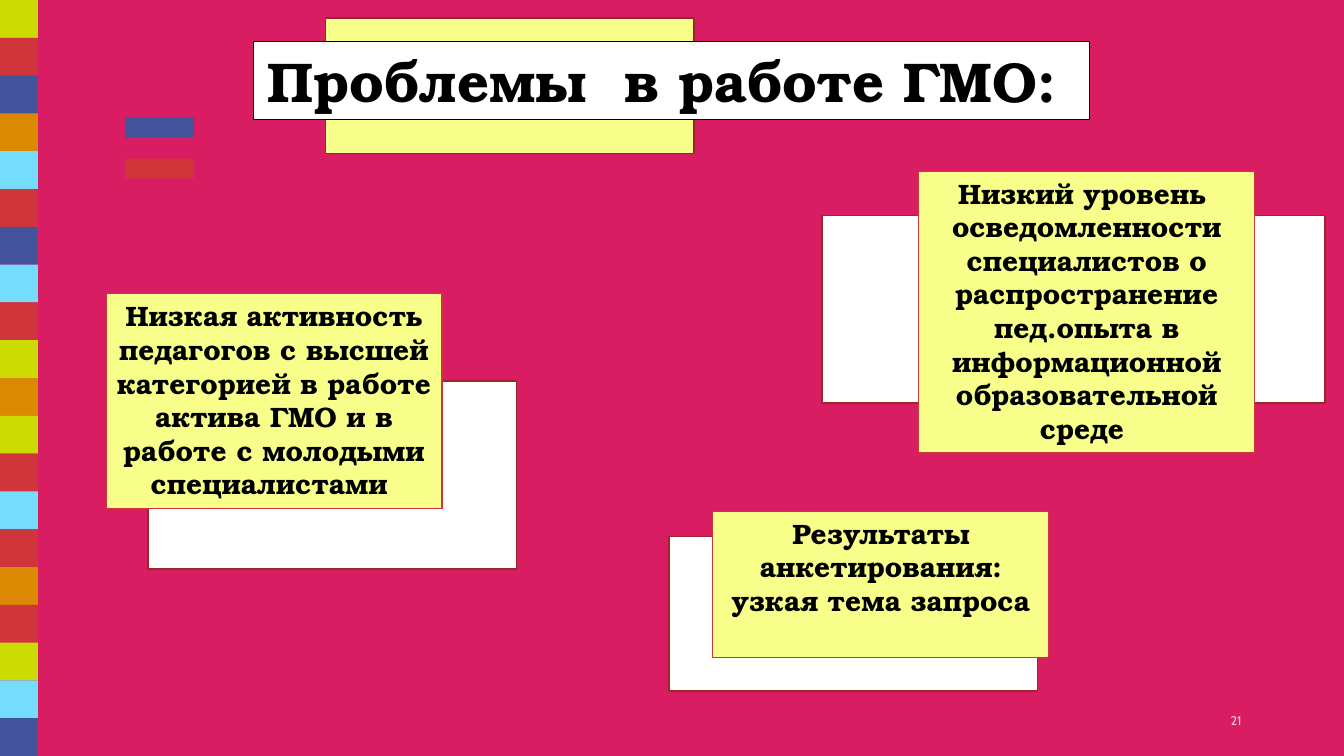
from pptx import Presentation
from pptx.dml.color import RGBColor
from pptx.enum.shapes import MSO_SHAPE
from pptx.enum.text import MSO_ANCHOR, PP_ALIGN
from pptx.oxml import parse_xml
from pptx.oxml.ns import nsdecls
from pptx.util import Pt

RECTANGLE = MSO_SHAPE.RECTANGLE
TOP, MIDDLE = MSO_ANCHOR.TOP, MSO_ANCHOR.MIDDLE
CENTER, RIGHT = PP_ALIGN.CENTER, PP_ALIGN.RIGHT

PX = 9525
WIDTH, HEIGHT = 1280, 720
HEADING_FONT, NUMBER_FONT = "TeX Gyre Bonum", "Cabin"
CRIMSON, LEMON, WHITE, BLACK = "D91D62", "F7FF8A", "FFFFFF", "000000"
LIME, RED, BLUE, ORANGE, SKY = "CBDA00", "D1353C", "42529B", "DB8802", "76DCFD"
MAROON, PALE_PINK, OLIVE, DARK_OLIVE = "9B272C", "F9D0DF", "98A300", "656D00"

STRIPE = [LIME, RED, BLUE, ORANGE, SKY, RED, BLUE, SKY, RED, LIME,
          ORANGE, LIME, RED, SKY, RED, ORANGE, RED, LIME, SKY, BLUE]
PROBLEMS = [
    ((101, 280, 320, 204), (40, 83, 351, 179), OLIVE,
     ["Низкая активность педагогов с высшей категорией в работе "
      "актива ГМО и в работе с молодыми специалистами "]),
    ((875, 163, 320, 268), (-92, 42, 479, 179), OLIVE,
     ["Низкий уровень  осведомленности специалистов о распространение "
      "пед.опыта в информационной образовательной среде "]),
    ((679, 487, 320, 139), (-42, 24, 351, 147), DARK_OLIVE,
     ["Результаты анкетирования:", "узкая тема запроса"]),
]


def rgb(hex_color):
    """Turn a hex string into a colour."""
    return RGBColor.from_string(hex_color)


def emu(box):
    """Turn a box in px into EMU lengths."""
    return [length * PX for length in box]


def panel(slide, box, fill, line=None, line_width=1):
    """Draw a flat rectangle with an optional border."""
    rectangle = slide.shapes.add_shape(RECTANGLE, *emu(box))
    rectangle.shadow.inherit = False
    rectangle.fill.solid()
    rectangle.fill.fore_color.rgb = rgb(fill)
    if line:
        rectangle.line.color.rgb = rgb(line)
        rectangle.line.width = Pt(line_width)
    else:
        rectangle.line.fill.background()
    return rectangle


def write(frame, lines, size, font, color, align, anchor=TOP, bold=False):
    """Fill a text frame with evenly styled paragraphs."""
    frame.text = "\n".join(lines)
    frame.vertical_anchor = anchor
    for paragraph in frame.paragraphs:
        paragraph.alignment = align
        paragraph.font.size = Pt(size)
        paragraph.font.name = font
        paragraph.font.bold = bold
        paragraph.font.color.rgb = rgb(color)


def outline(frame, color):
    """Give the letters a thin coloured outline."""
    for paragraph in frame.paragraphs:
        for run in paragraph.runs:
            properties = run.font._element
            properties.insert(0, parse_xml(
                f'<a:ln {nsdecls("a")} w="{Pt(0.75)}"><a:solidFill>'
                f'<a:srgbClr val="{color}"/></a:solidFill></a:ln>'))


def stripe(slide, box):
    """Stack equal coloured tiles down the box."""
    left, top, width, height = box
    tile = height // len(STRIPE)
    for row, color in enumerate(STRIPE):
        panel(slide, (left, top + row * tile, width, tile), color)


def equals_sign(slide, box):
    """Place a blue bar at the top of the box and a red one at its bottom."""
    left, top, width, height = box
    bar = 19
    panel(slide, (left, top, width, bar), BLUE)
    panel(slide, (left, top + height - bar, width, bar), RED)


def title(slide, box):
    """Place the heading banner over its yellow backing."""
    left, top, width, height = box
    panel(slide, (left + 69, top - 23, 351, 129), LEMON, MAROON)
    frame = panel(slide, box, WHITE, BLACK, 0.75).text_frame
    frame.word_wrap = False
    write(frame, ["Проблемы  в работе ГМО: "], 40, HEADING_FONT, BLACK, CENTER, bold=True)
    outline(frame, OLIVE)


def problem(slide, box, backing, edge, lines):
    """Place a yellow note over a white backing offset from it."""
    left, top, width, height = box
    shift_x, shift_y, backing_width, backing_height = backing
    panel(slide, (left + shift_x, top + shift_y, backing_width, backing_height), WHITE, MAROON)
    frame = panel(slide, box, LEMON, RED, 0.75).text_frame
    frame.word_wrap = True
    write(frame, lines, 20, HEADING_FONT, BLACK, CENTER, bold=True)
    outline(frame, edge)


def page_number(slide, box):
    """Write the page number at the right of the box."""
    frame = slide.shapes.add_textbox(*emu(box)).text_frame
    frame.word_wrap = True
    write(frame, ["21"], 9, NUMBER_FONT, PALE_PINK, RIGHT, MIDDLE)


def main():
    """Build the slide and save it."""
    deck = Presentation()
    deck.slide_width, deck.slide_height = emu((WIDTH, HEIGHT))
    slide = deck.slides.add_slide(deck.slide_layouts[6])
    slide.background.fill.solid()
    slide.background.fill.fore_color.rgb = rgb(CRIMSON)
    stripe(slide, (0, 0, 36, HEIGHT))
    equals_sign(slide, (119, 112, 66, 58))
    title(slide, (241, 40, 797, 74))
    for box, backing, edge, lines in PROBLEMS:
        problem(slide, box, backing, edge, lines)
    page_number(slide, (904, 667, 288, 38))
    deck.save("out.pptx")


if __name__ == "__main__":
    main()
